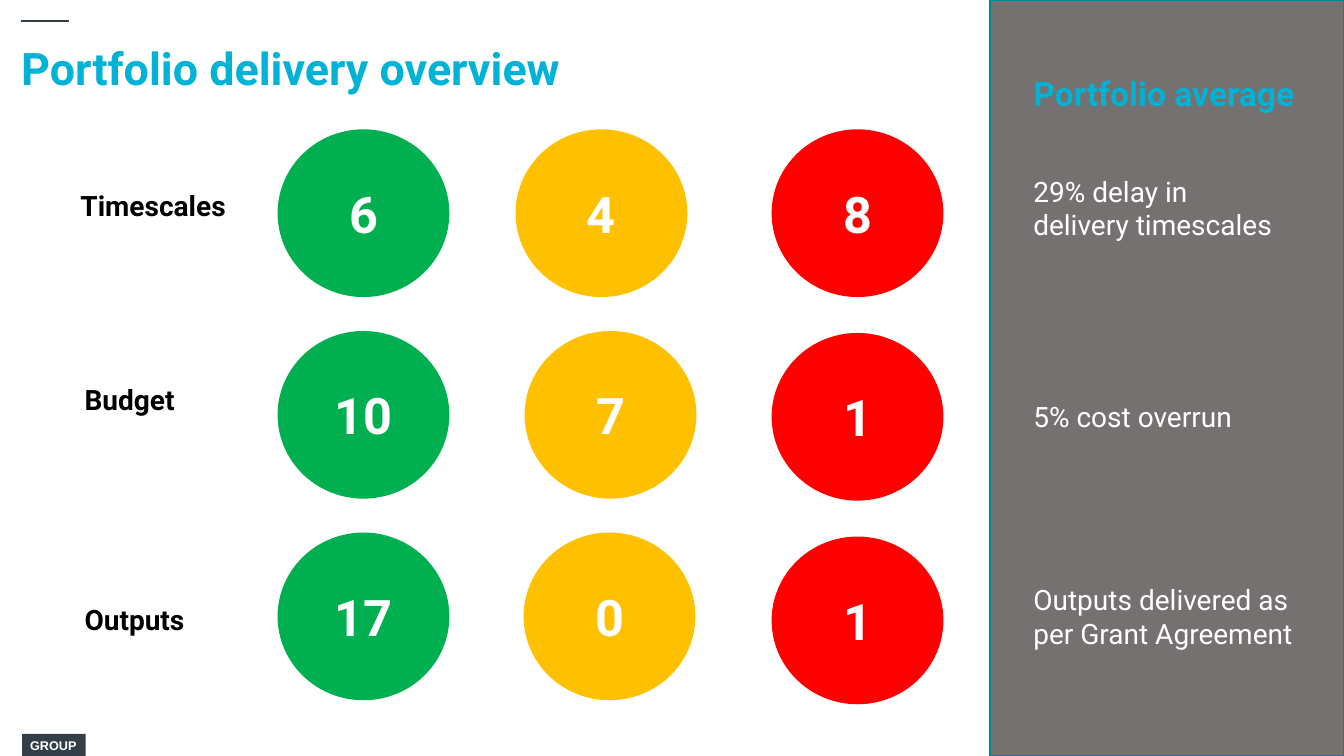
from dataclasses import dataclass

import pptx
import pptx.dml.color
import pptx.enum.shapes
import pptx.enum.text
import pptx.oxml.ns
import pptx.util
from pptx.util import Inches

SHAPE = pptx.enum.shapes.MSO_SHAPE
ALIGN = pptx.enum.text.PP_ALIGN
ANCHOR = pptx.enum.text.MSO_ANCHOR

CYAN, SLATE, GREY, TEAL = "00B2D5", "323E48", "767171", "00849E"
GREEN, AMBER, RED = "00B050", "FFC000", "FF0000"
WHITE, BLACK = "FFFFFF", "000000"

CIRCLE_WIDTH, CIRCLE_HEIGHT, FIRST_TOP = 1.69, 1.65, 1.29


@dataclass
class RatingColumn:
    color: str
    lefts: tuple[float, ...]
    pitch: float
    counts: tuple[int, ...]


@dataclass
class Label:
    text: str
    left: float
    top: float
    width: float
    height: float
    color: str
    size: int = 20
    bold: bool = False
    margin: tuple[float, float] = (0.1, 0.05)


COLUMNS = [
    RatingColumn(GREEN, (2.76, 2.76, 2.76), 2.0, (6, 10, 17)),
    RatingColumn(AMBER, (5.12, 5.21, 5.2), 2.0, (4, 7, 0)),
    RatingColumn(RED, (7.66, 7.66, 7.66), 2.02, (8, 1, 1)),
]

LABELS = [
    Label("Portfolio delivery overview", 0.21, 0.4, 12.91, 0.87, CYAN, 32, True, (0, 0)),
    # Row headings
    Label("Timescales", 0.7, 1.82, 2.87, 0.44, BLACK, bold=True),
    Label("Budget", 0.74, 3.75, 2.87, 0.44, BLACK, bold=True),
    Label("Outputs", 0.74, 5.93, 2.87, 0.44, BLACK, bold=True),
    # Sidebar findings
    Label("Portfolio average", 10.15, 0.67, 3.18, 0.5, CYAN, 24, True),
    Label("29% delay in delivery timescales", 10.15, 1.68, 2.7, 0.77, WHITE),
    Label("5% cost overrun", 10.15, 3.91, 2.45, 0.44, WHITE),
    Label("Outputs delivered as per Grant Agreement", 10.15, 5.73, 2.91, 0.77, WHITE),
]


def rgb(value: str) -> pptx.dml.color.RGBColor:
    return pptx.dml.color.RGBColor.from_string(value)


def write_text(box, text: str, *, size: float, color: str, bold: bool = False,
               font: str = "Roboto", align=ALIGN.LEFT, anchor=ANCHOR.TOP,
               margin: tuple[float, float] = (0.1, 0.05), wrap: bool = True) -> None:
    frame = box.text_frame
    frame.word_wrap = wrap
    frame.vertical_anchor = anchor
    frame.margin_left = frame.margin_right = Inches(margin[0])
    frame.margin_top = frame.margin_bottom = Inches(margin[1])
    para = frame.paragraphs[0]
    para.alignment = align
    span = para.add_run()
    span.text = text
    span.font.name = font
    span.font.size = pptx.util.Pt(size)
    span.font.bold = bold
    span.font.color.rgb = rgb(color)


def add_block(page, kind, left: float, top: float, width: float, height: float,
              *, fill: str, line: str | None = None):
    block = page.shapes.add_shape(kind, Inches(left), Inches(top), Inches(width), Inches(height))
    block.shadow.inherit = False
    block.fill.solid()
    block.fill.fore_color.rgb = rgb(fill)
    if line:
        block.line.color.rgb = rgb(line)
        block.line.width = pptx.util.Pt(1)
    else:
        block.line.fill.background()
    return block


def add_rule(page, left: float, right: float, top: float, color: str) -> None:
    rule = page.shapes.add_connector(pptx.enum.shapes.MSO_CONNECTOR.STRAIGHT,
                                     Inches(left), Inches(top), Inches(right), Inches(top))
    rule.line.color.rgb = rgb(color)
    rule.line.width = pptx.util.Pt(1)
    properties = rule.element.find(pptx.oxml.ns.qn("p:spPr"))
    properties.append(pptx.oxml.parse_xml(f"<a:effectLst {pptx.oxml.ns.nsdecls('a')}/>"))


def add_column(page, column: RatingColumn) -> None:
    for row, (left, count) in enumerate(zip(column.lefts, column.counts)):
        circle = add_block(page, SHAPE.FLOWCHART_CONNECTOR, left, FIRST_TOP + row * column.pitch,
                           CIRCLE_WIDTH, CIRCLE_HEIGHT, fill=column.color, line=column.color)
        write_text(circle, str(count), size=36, color=WHITE, bold=True,
                   align=ALIGN.CENTER, anchor=ANCHOR.MIDDLE)


def add_label(page, label: Label) -> None:
    box = page.shapes.add_textbox(Inches(label.left), Inches(label.top),
                                  Inches(label.width), Inches(label.height))
    write_text(box, label.text, size=label.size, color=label.color,
               bold=label.bold, margin=label.margin)


def main() -> None:
    deck = pptx.Presentation()
    deck.slide_width, deck.slide_height = Inches(13.33), Inches(7.5)
    page = deck.slides.add_slide(deck.slide_layouts[6])

    # Footer tag, top rule and sidebar
    tag = add_block(page, SHAPE.RECTANGLE, 0.22, 7.28, 0.63, 0.23, fill=SLATE)
    write_text(tag, "GROUP", size=9, color=WHITE, bold=True, font="Arial",
               margin=(0.08, 0.04), wrap=False)
    add_rule(page, 0.21, 0.68, 0.21, SLATE)
    add_block(page, SHAPE.RECTANGLE, 9.82, 0, 3.51, 7.5, fill=GREY, line=TEAL)

    # Rating circles, then all labels
    for column in COLUMNS:
        add_column(page, column)
    for label in LABELS:
        add_label(page, label)

    deck.save("out.pptx")


if __name__ == "__main__":
    main()
